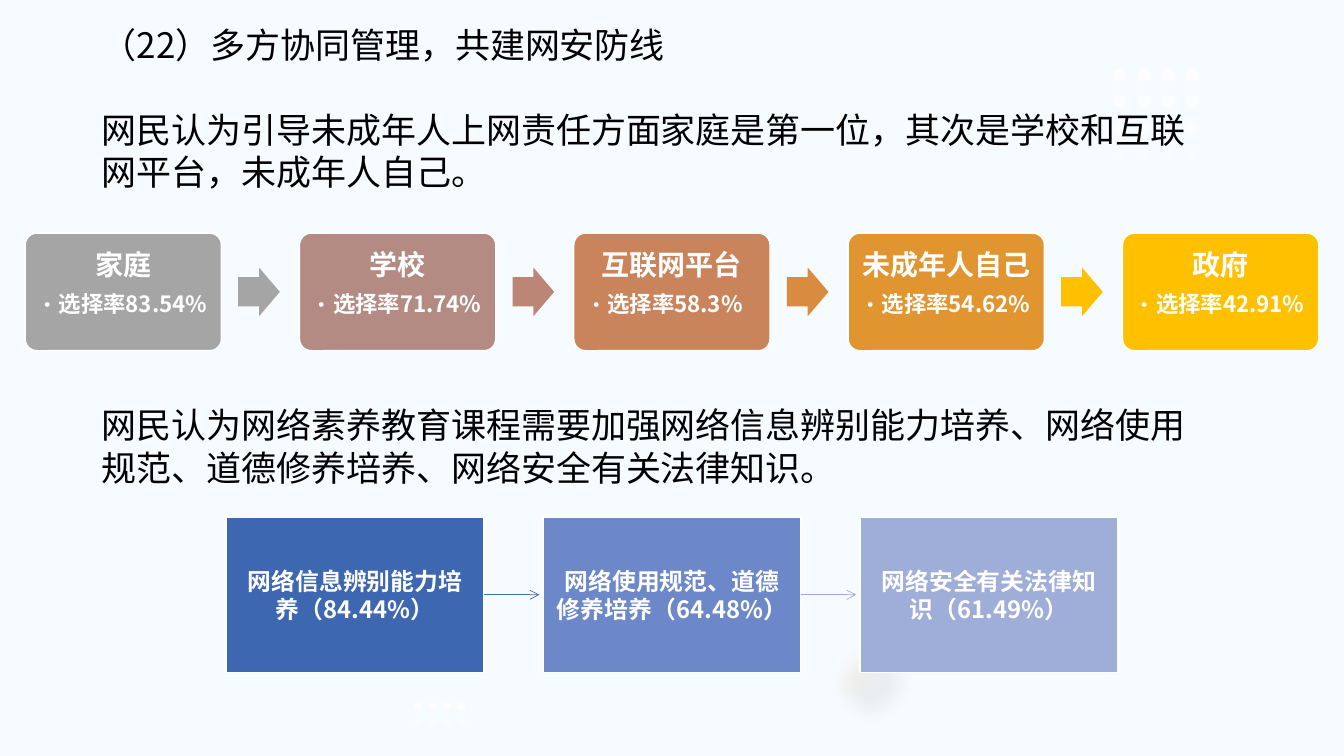
from dataclasses import dataclass
from math import cos, pi, sin
from lxml import etree
from pptx import Presentation
from pptx.dml.color import RGBColor
from pptx.enum.shapes import MSO_CONNECTOR, MSO_SHAPE
from pptx.enum.text import MSO_ANCHOR, MSO_AUTO_SIZE, PP_ALIGN
from pptx.oxml.ns import qn
from pptx.util import Pt

ROUND, RECT, OVAL = MSO_SHAPE.ROUNDED_RECTANGLE, MSO_SHAPE.RECTANGLE, MSO_SHAPE.OVAL
ARROW, LINE = MSO_SHAPE.RIGHT_ARROW, MSO_CONNECTOR.STRAIGHT
TOP, MID = MSO_ANCHOR.TOP, MSO_ANCHOR.MIDDLE
LEFT, MIDDLE = PP_ALIGN.LEFT, PP_ALIGN.CENTER
FIXED = MSO_AUTO_SIZE.NONE


@dataclass(frozen=True)
class Theme:
    font: str = "Noto Sans CJK SC"
    back: str = "F6FBFF"
    ink: str = "000000"
    white: str = "FFFFFF"
    glow: tuple = ("4B6C9A", "EACAA3")
    cards: tuple = ("A5A5A5", "B48B83", "C9845C", "E19530", "FFC000")
    heads: tuple = ("A5A5A5", "BB8676", "D98C3F", "FFC000")
    tiles: tuple = ("3E67B2", "6C88C8", "9FAED8")
    links: tuple = ("416DBB", "9EADD8")
    text: float = 25
    head: float = 20
    rate: float = 16
    tile: float = 17


THEME = Theme()
TITLE = "（22）多方协同管理，共建网安防线"
NOTES = (
    "网民认为引导未成年人上网责任方面家庭是第一位，其次是学校和互联网平台，未成年人自己。",
    "网民认为网络素养教育课程需要加强网络信息辨别能力培养、网络使用规范、道德修养培养、网络安全有关法律知识。",
)
DUTIES = (
    ("家庭", "83.54%"),
    ("学校", "71.74%"),
    ("互联网平台", "58.3%"),
    ("未成年人自己", "54.62%"),
    ("政府", "42.91%"),
)
SKILLS = (
    "网络信息辨别能力培养（84.44%）",
    "网络使用规范、道德修养培养（64.48%）",
    "网络安全有关法律知识（61.49%）",
)


def rgb(code):
    return RGBColor.from_string(code)


def add_run(para, text, size, color, bold=False):
    run = para.add_run()
    run.text = text
    font = run.font
    font.name, font.size, font.bold = THEME.font, Pt(size), bold
    font.color.rgb = rgb(color)
    east = etree.SubElement(run.font._element, qn("a:ea"))
    east.set("typeface", THEME.font)


def set_para(para, align, lead, before=0):
    para.alignment = align
    para.line_spacing = Pt(lead)
    para.space_before, para.space_after = Pt(before), Pt(0)


def set_list(para, hang, mark=None):
    props = para._p.get_or_add_pPr()
    props.set("marL", str(Pt(hang)))
    props.set("indent", str(-Pt(hang)))
    if mark:
        etree.SubElement(props, qn("a:buFont")).set("typeface", THEME.font)
        etree.SubElement(props, qn("a:buChar")).set("char", mark)
    else:
        etree.SubElement(props, qn("a:buNone"))


def set_frame(frame, anchor, pad):
    frame.word_wrap, frame.auto_size = True, FIXED
    frame.vertical_anchor = anchor
    frame.margin_left = frame.margin_right = Pt(pad)
    frame.margin_top = frame.margin_bottom = Pt(pad)
    return frame


def add_block(slide, kind, box, fill, line=None):
    shape = slide.shapes.add_shape(kind, *map(Pt, box))
    shape.shadow.inherit = False
    shape.fill.solid()
    shape.fill.fore_color.rgb = rgb(fill)
    if line:
        shape.line.color.rgb = rgb(line)
        shape.line.width = Pt(1)
    else:
        shape.line.fill.background()
    return shape


def set_fade(shape, stops, round_fill=False):
    shape.shadow.inherit = False
    shape.line.fill.background()
    shape.fill.background()
    props = shape.element.spPr
    grad = etree.Element(qn("a:gradFill"))
    steps = etree.SubElement(grad, qn("a:gsLst"))
    for place, color, alpha in stops:
        stop = etree.SubElement(steps, qn("a:gs"), pos=str(place * 1000))
        tint = etree.SubElement(stop, qn("a:srgbClr"), val=color)
        etree.SubElement(tint, qn("a:alpha"), val=str(alpha * 1000))
    if round_fill:
        route = etree.SubElement(grad, qn("a:path"))
        route.set("path", "circle")
        etree.SubElement(route, qn("a:fillToRect"), l="100000", t="100000")
    else:
        etree.SubElement(grad, qn("a:lin"), ang="5400000", scaled="0")
    props.replace(props.find(qn("a:noFill")), grad)
    shape.element.getparent().insert(2, shape.element)


def add_glow(slide, box):
    spot = slide.shapes.add_shape(OVAL, *map(Pt, box))
    cool, warm = THEME.glow
    set_fade(spot, ((0, cool, 0), (70, warm, 25)), True)
    effects = spot.element.spPr.find(qn("a:effectLst"))
    etree.SubElement(effects, qn("a:softEdge"), rad=str(Pt(12)))


def add_dots(slide, box, cols, rows, size):
    left, top, width, height = box
    half = size / 2
    pen = None
    for row in range(rows):
        for col in range(cols):
            mid_x = left + half + col * (width - size) / (cols - 1)
            mid_y = top + half + row * (height - size) / (rows - 1)
            ring = [(Pt(mid_x + half * cos(k * pi / 8)), Pt(mid_y + half * sin(k * pi / 8)))
                    for k in range(16)]
            if pen:
                pen.move_to(*ring[0])
            else:
                pen = slide.shapes.build_freeform(*ring[0], scale=1.0)
            pen.add_line_segments(ring[1:], close=True)
    set_fade(pen.convert_to_shape(), ((0, THEME.white, 100), (100, THEME.white, 0)))


def add_copy(slide, box):
    left, top, width, height = box
    lead = 30.2
    title, body = slide.shapes.title, slide.placeholders[1]
    for holder, drop, tall in ((title, 0, 2 * lead), (body, 2 * lead, height - 2 * lead)):
        holder.left, holder.top = Pt(left), Pt(top + drop)
        holder.width, holder.height = Pt(width), Pt(tall)
        frame = set_frame(holder.text_frame, TOP, 3.6)
        frame.margin_left = frame.margin_right = Pt(7.2)
    para = title.text_frame.paragraphs[0]
    set_para(para, LEFT, lead)
    add_run(para, TITLE, THEME.text, THEME.ink)
    frame = body.text_frame
    for i, note in enumerate(NOTES):
        para = frame.add_paragraph() if i else frame.paragraphs[0]
        set_para(para, LEFT, lead, 5 * lead * i)
        set_list(para, 0)
        add_run(para, note, THEME.text, THEME.ink)


def add_chain(slide, box):
    left, top, width, height = box
    wide = 140.2
    step = (width - wide) / (len(DUTIES) - 1)
    for i, (name, rate) in enumerate(DUTIES):
        x = left + i * step
        card = add_block(slide, ROUND, (x, top, wide, height), THEME.cards[i], THEME.white)
        card.adjustments[0] = 0.1
        frame = set_frame(card.text_frame, TOP, 5.6)
        para = frame.paragraphs[0]
        set_para(para, MIDDLE, 26)
        add_run(para, name, THEME.head, THEME.white, True)
        para = frame.add_paragraph()
        set_para(para, LEFT, 18.6, 7.3)
        set_list(para, 13.5, "•")
        add_run(para, "选择率" + rate, THEME.rate, THEME.white, True)
        if i < len(THEME.heads):
            head = add_block(slide, ARROW, (x + wide + 12, top + height / 2 - 17.4, 29.7, 34.8),
                             THEME.heads[i])
            head.adjustments[0], head.adjustments[1] = 0.6, 0.5


def add_tiles(slide, box):
    left, top, width, height = box
    wide = 184.3
    step = (width - wide) / (len(SKILLS) - 1)
    for i, skill in enumerate(SKILLS):
        x = left + i * step
        tile = add_block(slide, RECT, (x, top, wide, height), THEME.tiles[i], THEME.white)
        para = set_frame(tile.text_frame, MID, 9.4).paragraphs[0]
        set_para(para, MIDDLE, 20.5)
        add_run(para, skill, THEME.tile, THEME.white, True)
        if i < len(THEME.links):
            y = top + height / 2
            link = slide.shapes.add_connector(LINE, Pt(x + wide), Pt(y), Pt(x + step - 2.6), Pt(y))
            link.line.color.rgb, link.line.width = rgb(THEME.links[i]), Pt(0.5)
            etree.SubElement(link.line._get_or_add_ln(), qn("a:tailEnd"), type="arrow")
            etree.SubElement(link.element.spPr, qn("a:effectLst"))


def main():
    deck = Presentation()
    deck.slide_width, deck.slide_height = Pt(960), Pt(540)
    slide = deck.slides.add_slide(deck.slide_layouts[1])
    slide.background.fill.solid()
    slide.background.fill.fore_color.rgb = rgb(THEME.back)
    add_dots(slide, (296, 502, 36, 28), 4, 3, 5.4)
    add_dots(slide, (795, 48.7, 60, 104), 4, 6, 9)
    add_glow(slide, (587.5, 453, 71.3, 71.3))
    add_copy(slide, (65.5, 13, 811.4, 339))
    add_chain(slide, (18, 166.5, 924, 84))
    add_tiles(slide, (161.5, 369.5, 637, 110.7))
    deck.save("out.pptx")


if __name__ == "__main__":
    main()
